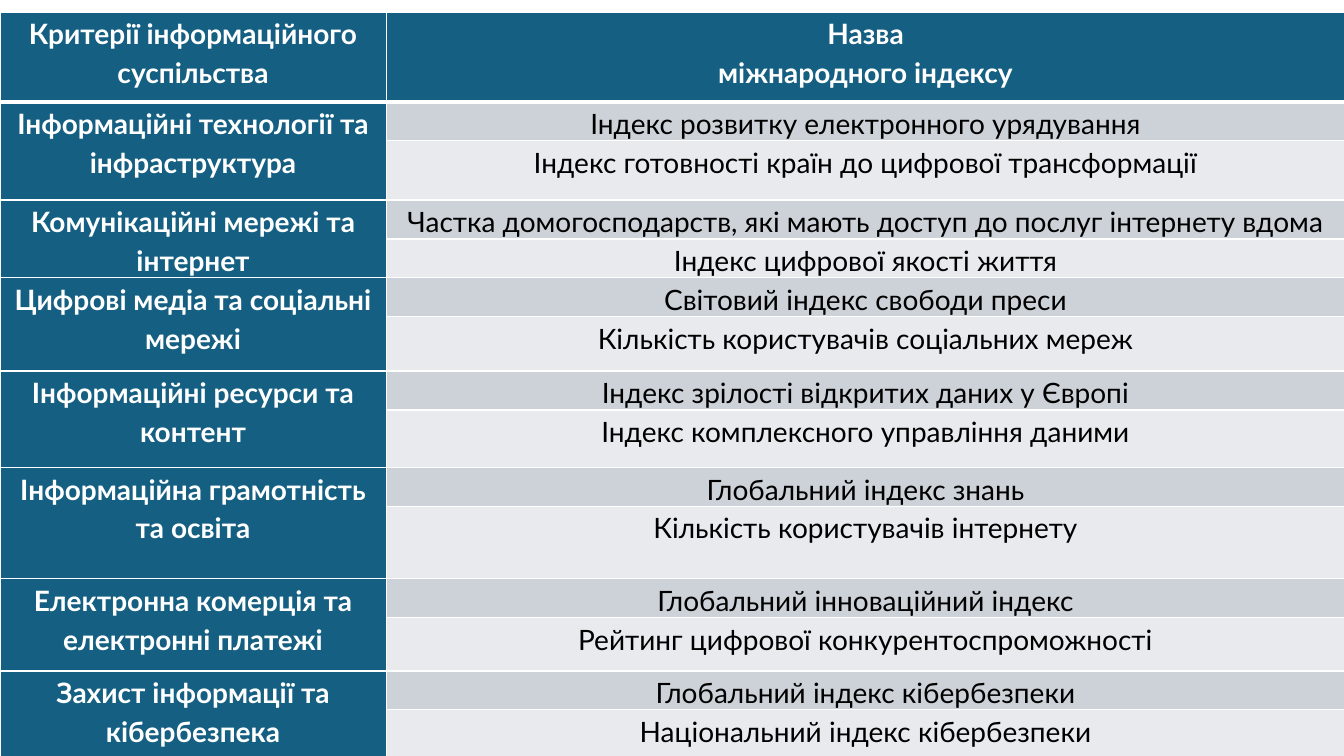
from dataclasses import dataclass

from lxml.etree import SubElement
from pptx import Presentation
from pptx.dml.color import RGBColor
from pptx.enum.text import MSO_ANCHOR, PP_ALIGN
from pptx.oxml.ns import qn
from pptx.util import Emu, Pt

EMU_PER_PX = 9144


@dataclass(frozen=True)
class Theme:
    font: str = "Lato"
    size: int = 20
    line_spacing: float = 1.15
    white: str = "FFFFFF"
    black: str = "000000"
    teal: str = "156082"
    bands: tuple = ("CCD2D8", "E8EAED")
    thin: int = 1
    thick: int = 3


THEME = Theme()

HEADINGS = (
    "Критерії інформаційного суспільства",
    "Назва\nміжнародного індексу",
)
HEADING_HEIGHT = 89
FIRST_INDEX_HEIGHT = 38

# criterion, its two indices, height of the second index row
CRITERIA = (
    ("Інформаційні технології та інфраструктура",
     ("Індекс розвитку електронного урядування",
      "Індекс готовності країн до цифрової трансформації"), 59),
    ("Комунікаційні мережі та інтернет",
     ("Частка домогосподарств, які мають доступ до послуг інтернету вдома",
      "Індекс цифрової якості життя"), 38),
    ("Цифрові медіа та соціальні мережі",
     ("Світовий індекс свободи преси",
      "Кількість користувачів соціальних мереж"), 54),
    ("Інформаційні ресурси та контент",
     ("Індекс зрілості відкритих даних у Європі",
      "Індекс комплексного управління даними"), 57),
    ("Інформаційна грамотність та освіта",
     ("Глобальний індекс знань",
      "Кількість користувачів інтернету"), 72),
    ("Електронна комерція та електронні платежі",
     ("Глобальний інноваційний індекс",
      "Рейтинг цифрової конкурентоспроможності"), 53),
    ("Захист інформації та кібербезпека",
     ("Глобальний індекс кібербезпеки",
      "Національний індекс кібербезпеки"), 61),
)


def px(length):
    return Emu(length * EMU_PER_PX)


def set_borders(cell, top, bottom):
    """Draw white cell edges; must run before the cell is filled."""
    properties = cell._tc.get_or_add_tcPr()
    widths = {"a:lnL": THEME.thin, "a:lnR": THEME.thin, "a:lnT": top, "a:lnB": bottom}
    for tag, width in widths.items():
        line = SubElement(properties, qn(tag), w=str(Pt(width)))
        fill = SubElement(line, qn("a:solidFill"))
        SubElement(fill, qn("a:srgbClr"), val=THEME.white)


def write_text(text_frame, text, *, color, bold=False):
    text_frame.word_wrap = True
    text_frame.text = text
    for paragraph in text_frame.paragraphs:
        paragraph.alignment = PP_ALIGN.CENTER
        paragraph.line_spacing = THEME.line_spacing
        for run in paragraph.runs:
            run.font.name = THEME.font
            run.font.size = Pt(THEME.size)
            run.font.bold = bold
            run.font.color.rgb = RGBColor.from_string(color)


def style_cell(cell, fill, top=THEME.thin, bottom=THEME.thin):
    cell.margin_left = cell.margin_right = px(4)
    cell.margin_top = cell.margin_bottom = 0
    cell.vertical_anchor = MSO_ANCHOR.TOP
    set_borders(cell, top, bottom)
    cell.fill.solid()
    cell.fill.fore_color.rgb = RGBColor.from_string(fill)


def fill_headings(table):
    table.rows[0].height = px(HEADING_HEIGHT)
    for column, heading in enumerate(HEADINGS):
        cell = table.cell(0, column)
        style_cell(cell, THEME.teal, bottom=THEME.thick)
        write_text(cell.text_frame, heading, color=THEME.white, bold=True)


def fill_criterion(table, first_row, criterion, indices, second_height):
    top_edge = THEME.thick if first_row == 1 else THEME.thin
    heights = (FIRST_INDEX_HEIGHT, second_height)
    edges = (top_edge, THEME.thin)
    for offset, index_name in enumerate(indices):
        row = first_row + offset
        table.rows[row].height = px(heights[offset])
        style_cell(table.cell(row, 0), THEME.teal, top=edges[offset])
        index_cell = table.cell(row, 1)
        style_cell(index_cell, THEME.bands[offset], top=edges[offset])
        write_text(index_cell.text_frame, index_name, color=THEME.black)
    criterion_cell = table.cell(first_row, 0)
    criterion_cell.merge(table.cell(first_row + 1, 0))
    write_text(criterion_cell.text_frame, criterion, color=THEME.white, bold=True)


def add_criteria_table(slide):
    row_count = 1 + 2 * len(CRITERIA)
    table = slide.shapes.add_table(
        row_count, 2, px(0), px(12), px(1334), px(749)).table
    for column, width in zip(table.columns, (383, 951)):
        column.width = px(width)
    fill_headings(table)
    for number, (criterion, indices, second_height) in enumerate(CRITERIA):
        fill_criterion(table, 1 + 2 * number, criterion, indices, second_height)


def main():
    presentation = Presentation()
    presentation.slide_width, presentation.slide_height = px(1333), px(750)
    slide = presentation.slides.add_slide(presentation.slide_layouts[6])
    add_criteria_table(slide)
    presentation.save("out.pptx")


if __name__ == "__main__":
    main()
